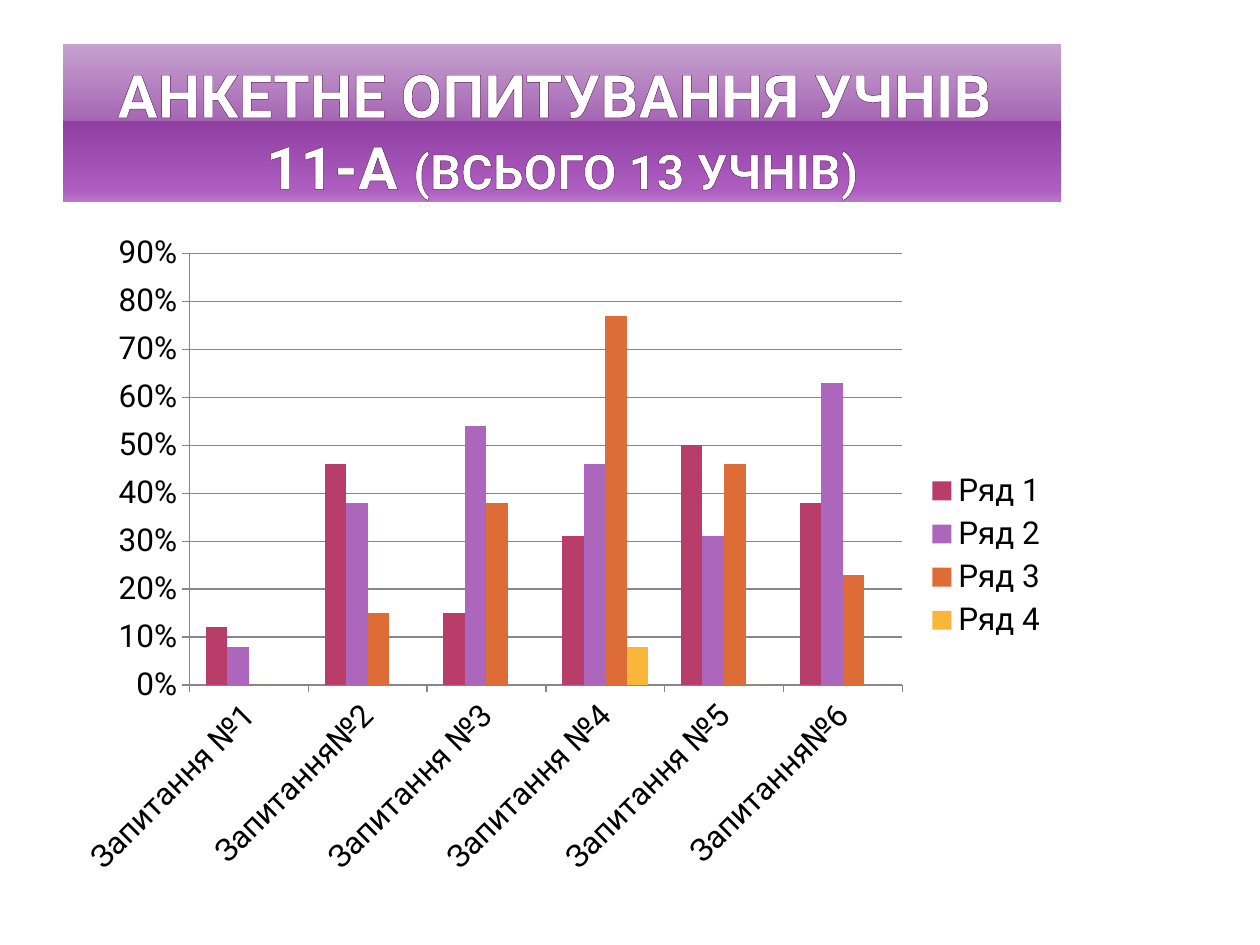
from typing import NamedTuple, Optional

from lxml.etree import SubElement
from pptx import Presentation
from pptx.chart.data import CategoryChartData
from pptx.dml.color import RGBColor
from pptx.enum.chart import XL_CHART_TYPE, XL_LEGEND_POSITION, XL_TICK_MARK
from pptx.enum.shapes import MSO_SHAPE
from pptx.enum.text import MSO_ANCHOR, PP_ALIGN
from pptx.oxml import parse_xml
from pptx.oxml.ns import nsdecls, qn
from pptx.util import Pt

FONT = "Roboto"
LEFT, WIDTH = Pt(36), Pt(570.24)


class Series(NamedTuple):
    name: str
    color: str
    values: tuple[Optional[float], ...]


class GradientStop(NamedTuple):
    percent: int
    color: str


CATEGORIES = ("Запитання №1", "Запитання№2", "Запитання №3",
              "Запитання №4", "Запитання №5", "Запитання№6")
SERIES = (
    Series("Ряд 1", "B83D68", (0.12, 0.46, 0.15, 0.31, 0.5, 0.38)),
    Series("Ряд 2", "AC66BB", (0.08, 0.38, 0.54, 0.46, 0.31, 0.63)),
    Series("Ряд 3", "DE6C36", (0, 0.15, 0.38, 0.77, 0.46, 0.23)),
    Series("Ряд 4", "F9B639", (None, None, None, 0.08, 0, 0)),
)
BANNER_STOPS = (
    GradientStop(0, "C6A2D0"), GradientStop(49, "A666B4"),
    GradientStop(49, "8F3EA1"), GradientStop(92, "AD5DBF"),
    GradientStop(100, "BA76CA"),
)


def rgb(color: str) -> RGBColor:
    return RGBColor.from_string(color)


def fill_gradient(sp, stops: tuple[GradientStop, ...]) -> None:
    """Fill a shape from top to bottom with any number of stops."""
    sp.fill.gradient()
    grad = sp._element.spPr.find(qn("a:gradFill"))
    for child in list(grad):
        grad.remove(child)
    stop_list = SubElement(grad, qn("a:gsLst"))
    for stop in stops:
        gs = SubElement(stop_list, qn("a:gs"), pos=str(stop.percent * 1000))
        SubElement(gs, qn("a:srgbClr"), val=stop.color)
    SubElement(grad, qn("a:lin"), ang="5400000", scaled="0")


def add_title_run(p, text: str, size: float) -> None:
    r = p.add_run()
    r.text = text
    r.font.name, r.font.size, r.font.bold = FONT, Pt(size), True
    r.font.color.rgb = rgb("FFFFFF")
    r.font._element.insert(0, parse_xml(
        f'<a:ln {nsdecls("a")} w="500"><a:solidFill>'
        '<a:srgbClr val="5E1A50"/></a:solidFill></a:ln>'))


def add_banner(s) -> None:
    sp = s.shapes.add_shape(MSO_SHAPE.RECTANGLE, LEFT, Pt(25.2), WIDTH, Pt(90))
    sp.shadow.inherit = False
    sp.line.fill.background()
    fill_gradient(sp, BANNER_STOPS)
    tf = sp.text_frame
    tf.word_wrap = True
    tf.vertical_anchor = MSO_ANCHOR.BOTTOM
    tf.margin_left = tf.margin_right = Pt(3.6)
    tf.margin_top = tf.margin_bottom = Pt(0)
    p = tf.paragraphs[0]
    p.alignment = PP_ALIGN.CENTER
    add_title_run(p, "АНКЕТНЕ ОПИТУВАННЯ УЧНІВ ", 34.2)
    p.add_line_break()
    add_title_run(p, "11-А ", 34.2)
    add_title_run(p, "(ВСЬОГО 13 УЧНІВ)", 27.9)


def style_line(line) -> None:
    line.color.rgb = rgb("878787")
    line.width = Pt(0.75)


def add_survey_chart(s) -> None:
    data = CategoryChartData(number_format="0%")
    data.categories = CATEGORIES
    for series in SERIES:
        data.add_series(series.name, series.values)
    chart = s.shapes.add_chart(XL_CHART_TYPE.COLUMN_CLUSTERED, LEFT, Pt(126.72),
                               WIDTH, Pt(381.6), data).chart
    chart.has_title = False
    chart.font.name, chart.font.size = FONT, Pt(18)
    chart.font.color.rgb = rgb("000000")
    chart.has_legend = True
    chart.legend.position = XL_LEGEND_POSITION.RIGHT
    chart.legend.include_in_layout = False

    plot = chart.plots[0]
    plot.gap_width, plot.overlap = 150, 0
    plot.vary_by_categories = False
    for bars, series in zip(plot.series, SERIES):
        bars.format.fill.solid()
        bars.format.fill.fore_color.rgb = rgb(series.color)
        bars.invert_if_negative = False

    for axis in (chart.category_axis, chart.value_axis):
        axis.major_tick_mark = XL_TICK_MARK.OUTSIDE
        axis.minor_tick_mark = XL_TICK_MARK.NONE
        style_line(axis.format.line)
        axis.tick_labels.font.size = Pt(18)
    label_body = chart.category_axis._element.find(qn("c:txPr")).find(qn("a:bodyPr"))
    label_body.set("rot", "-2700000")

    values = chart.value_axis
    values.minimum_scale, values.maximum_scale, values.major_unit = 0, 0.9, 0.1
    values.tick_labels.number_format = "0%"
    values.tick_labels.number_format_is_linked = False
    values.has_major_gridlines = True
    style_line(values.major_gridlines.format.line)


def main() -> None:
    prs = Presentation()
    prs.slide_width, prs.slide_height = Pt(720), Pt(540)
    s = prs.slides.add_slide(prs.slide_layouts[6])
    add_banner(s)
    add_survey_chart(s)
    prs.save("out.pptx")


if __name__ == "__main__":
    main()
